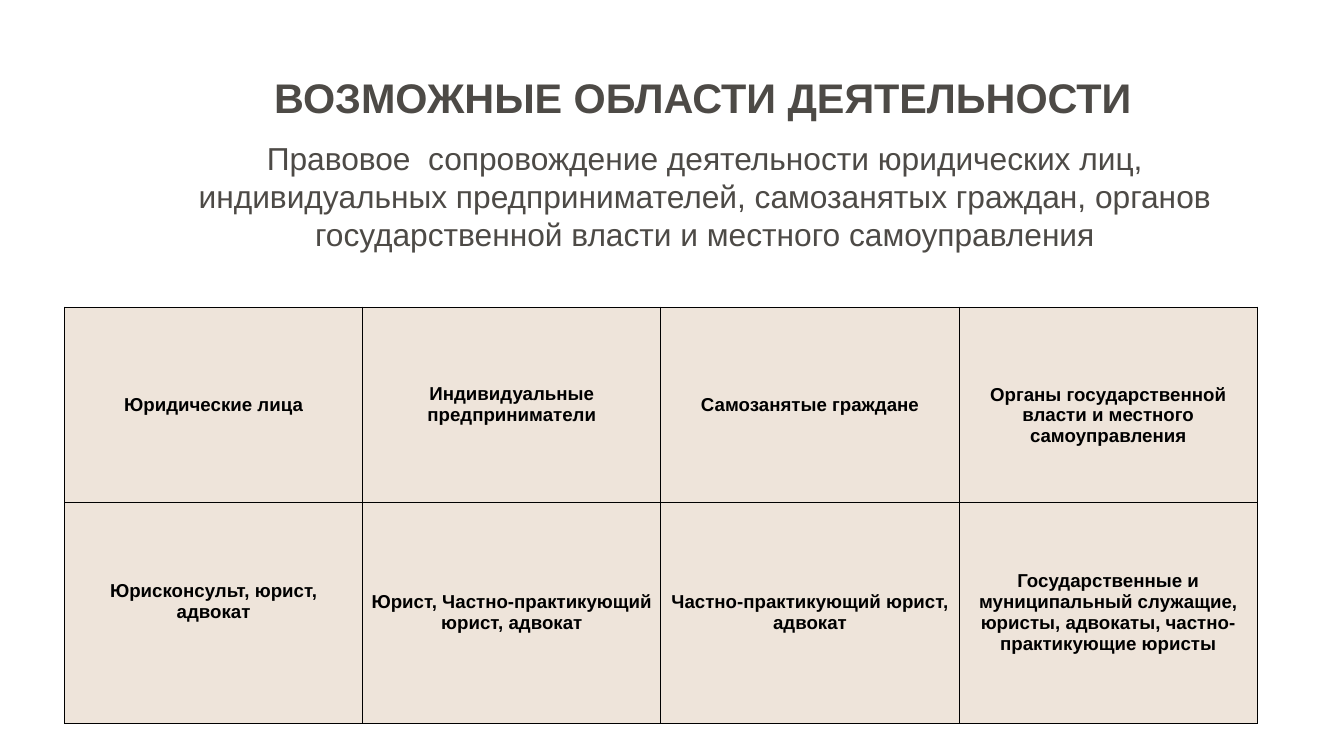
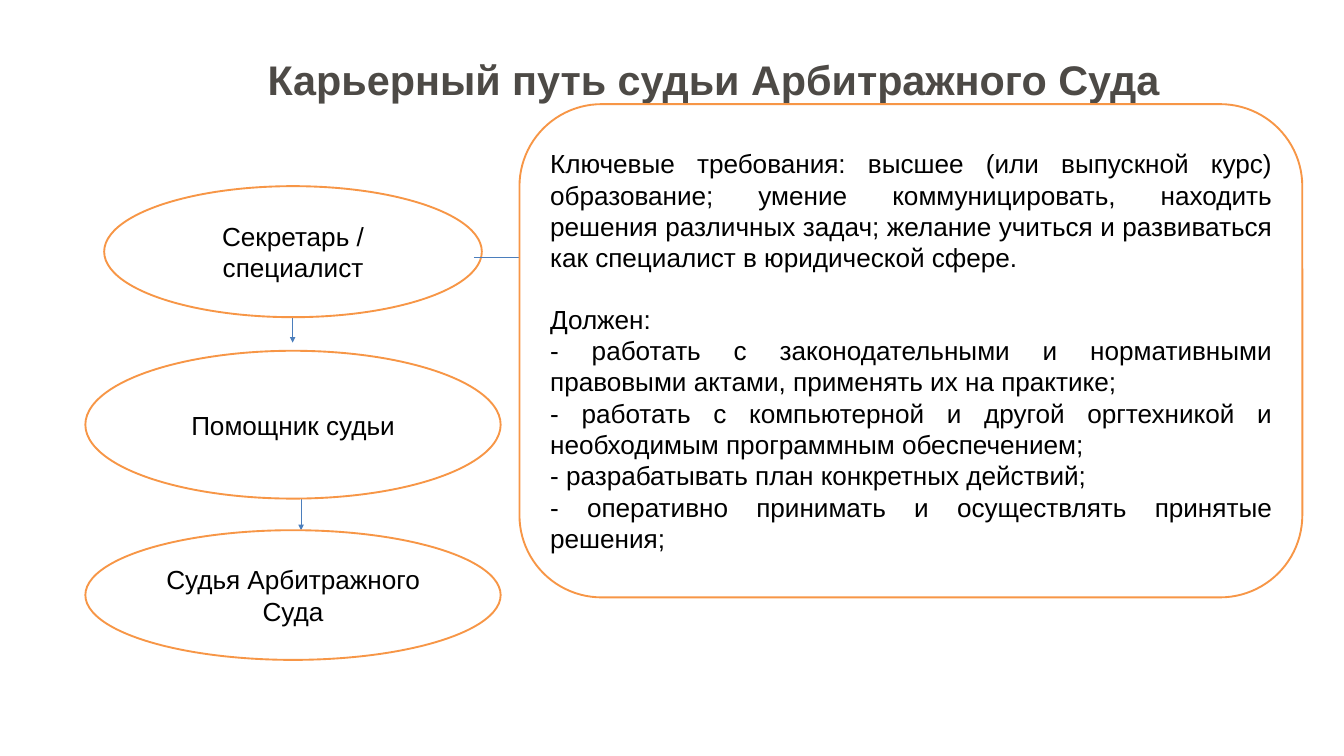
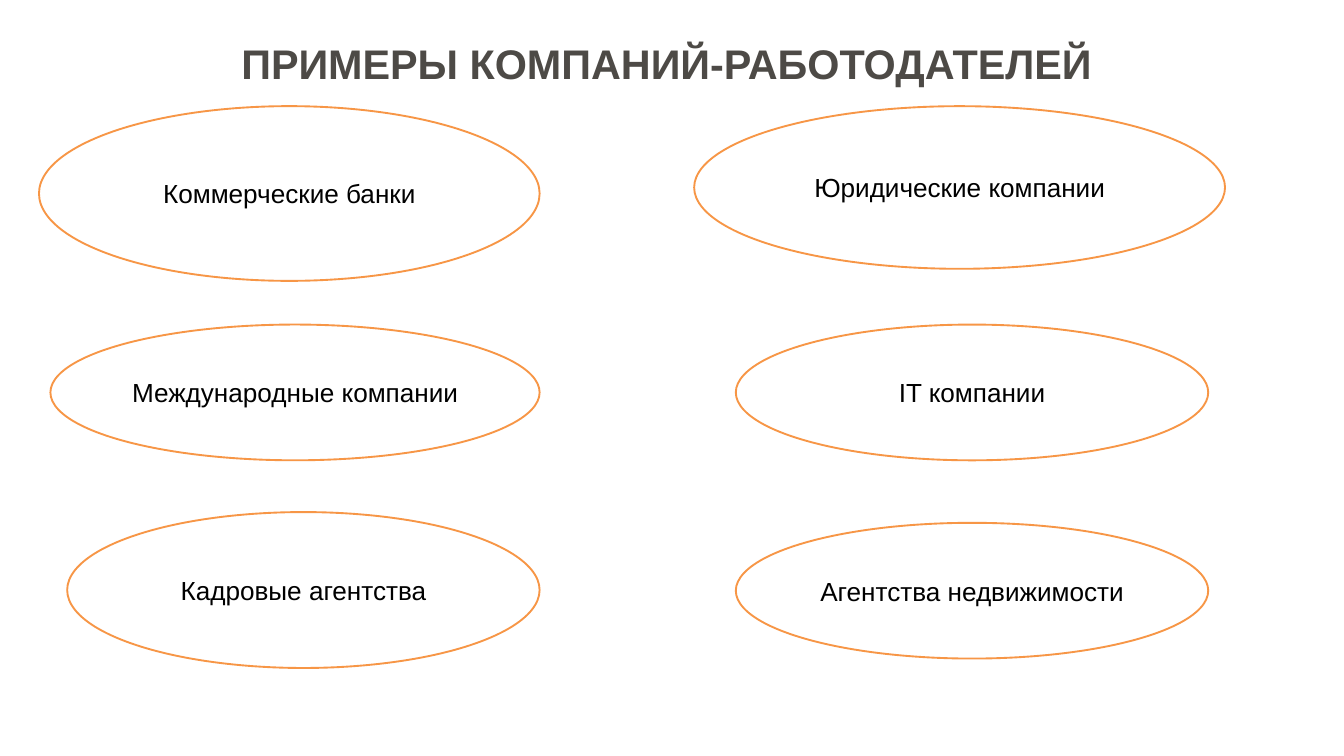
"""Build three slides about legal careers: fields of work, a judge's path, employers."""
from lxml import etree
from pptx import Presentation
from pptx.dml.color import RGBColor
from pptx.enum.shapes import MSO_CONNECTOR, MSO_SHAPE
from pptx.enum.text import MSO_ANCHOR, MSO_AUTO_SIZE, PP_ALIGN
from pptx.oxml import parse_xml
from pptx.oxml.ns import nsdecls, qn
from pptx.util import Inches, Pt

LEFT_TO_RIGHT = MSO_CONNECTOR.STRAIGHT
OVAL, CARD = MSO_SHAPE.OVAL, MSO_SHAPE.ROUNDED_RECTANGLE
MIDDLE, GROW = MSO_ANCHOR.MIDDLE, MSO_AUTO_SIZE.SHAPE_TO_FIT_TEXT
CENTER, RIGHT, JUSTIFY = PP_ALIGN.CENTER, PP_ALIGN.RIGHT, PP_ALIGN.JUSTIFY

COLORS = {"heading": "4D4A46", "body": "000000", "paper": "FFFFFF",
          "outline": "F79646", "arrow": "4B7EBC", "cell": "EEE4DA"}
PALETTE = {part: RGBColor.from_string(value) for part, value in COLORS.items()}
FONTS = {
    "title": {"name": "Arial", "size": Pt(44.3), "bold": True},
    "summary": {"name": "Arial", "size": Pt(34), "bold": False},
    "label": {"name": "Arial", "size": Pt(28), "bold": False},
    "cell": {"name": "Arial", "size": Pt(20), "bold": True},
}
BARE_FRAME = {"word_wrap": True, "auto_size": GROW, "margin_left": 0,
              "margin_right": 0, "margin_top": 0, "margin_bottom": 0}
LABEL_FRAME = {"word_wrap": True, "vertical_anchor": MIDDLE}

deck = Presentation()
deck.slide_width, deck.slide_height = Inches(20), Inches(11.25)
COLUMN, ROW = deck.slide_width / 80, deck.slide_height / 45
blank = deck.slide_layouts[6]


def area(left, top, width, height):
    """Turn grid columns and rows into slide lengths."""
    return [round(n * step) for n, step in zip((left, top, width, height), (COLUMN, ROW) * 2)]


def write(frame, lines, font, color, align, frame_format, spacing=None):
    """Fill a text frame with one paragraph per line."""
    for key, value in frame_format.items():
        setattr(frame, key, value)
    for number, line in enumerate(lines):
        paragraph = frame.add_paragraph() if number else frame.paragraphs[0]
        paragraph.alignment = align
        paragraph.line_spacing = spacing
        run = paragraph.add_run()
        run.text = line
        for key, value in FONTS[font].items():
            setattr(run.font, key, value)
        run.font.color.rgb = PALETTE[color]


titles = [
    ("ВОЗМОЖНЫЕ ОБЛАСТИ ДЕЯТЕЛЬНОСТИ", 0, 3.32, 67.36, RIGHT),
    ("Карьерный путь судьи Арбитражного Суда", 8.92, 2.24, 67.12, CENTER),
    ("ПРИМЕРЫ КОМПАНИЙ-РАБОТОДАТЕЛЕЙ", 3, 1.32, 73.36, CENTER),
]
for title, left, top, width, align in titles:
    slide = deck.slides.add_slide(blank)
    heading = slide.shapes.add_textbox(*area(left, top, width, 3.96))
    write(heading.text_frame, [title], "title", "heading", align, BARE_FRAME, 1.33)
fields, career, employers = deck.slides

clients = [
    ["Юридические лица", "Индивидуальные предприниматели", "Самозанятые граждане",
     "Органы государственной власти и местного самоуправления"],
    ["Юрисконсульт, юрист, адвокат", "Юрист, Частно-практикующий юрист, адвокат",
     "Частно-практикующий юрист, адвокат",
     "Государственные и муниципальный служащие, юристы, адвокаты, "
     "частно-практикующие юристы"],
]
clients_table = fields.shapes.add_table(2, 4, *area(3.84, 18.28, 71, 24.76)).table
clients_table.first_row = clients_table.horz_banding = False
for table_row, height in zip(clients_table.rows, (11.6, 13.16)):
    table_row.height = round(height * ROW)
for row, names in enumerate(clients):
    for column, name in enumerate(names):
        cell = clients_table.cell(row, column)
        write(cell.text_frame, [name], "cell", "body", CENTER, {"word_wrap": True})
        cell.vertical_anchor = MIDDLE
        for side in ("lnL", "lnR", "lnT", "lnB"):
            cell._tc.get_or_add_tcPr().append(parse_xml(
                f'<a:{side} {nsdecls("a")} w="12700"><a:solidFill>'
                f'<a:srgbClr val="{COLORS["body"]}"/></a:solidFill></a:{side}>'))
        cell.fill.solid()
        cell.fill.fore_color.rgb = PALETTE["cell"]
clients_table.cell(0, 3).margin_top = round(1.5 * ROW)
clients_table.cell(1, 0).margin_bottom = round(1.5 * ROW)

summary = fields.shapes.add_textbox(*area(9.08, 8.28, 65.76, 6.88))
write(summary.text_frame,
      ["Правовое  сопровождение деятельности юридических лиц, индивидуальных "
       "предпринимателей, самозанятых граждан, органов государственной власти "
       "и местного самоуправления"],
      "summary", "heading", CENTER, BARE_FRAME)

arrows = [((28.2, 15.32), (44.8, 15.32)),
          ((17.42, 18.88), (17.42, 20.4)),
          ((17.92, 29.68), (17.92, 31.56))]
for start, end in arrows:
    arrow = career.shapes.add_connector(LEFT_TO_RIGHT, *area(*start, *end))
    arrow.line.color.rgb = PALETTE["arrow"]
    arrow.line.width = Pt(0.75)
    etree.SubElement(arrow.line._get_or_add_ln(), qn("a:tailEnd"), type="triangle")
    etree.SubElement(arrow._element.spPr, qn("a:effectLst"))

requirements = [
    "Ключевые требования: высшее (или выпускной курс) образование; умение "
    "коммуницировать, находить решения различных задач; желание учиться и "
    "развиваться как специалист в юридической сфере.",
    "Должен:",
    "- работать с законодательными и нормативными правовыми актами, применять их на практике;",
    "- работать с компьютерной и другой оргтехникой и необходимым программным обеспечением;",
    "- разрабатывать план конкретных действий;",
    "- оперативно принимать и осуществлять принятые решения;",
]
outlined = [
    (career, OVAL, (6.2, 11.08, 22.48, 7.8), ["Секретарь / специалист"], CENTER),
    (career, OVAL, (5.08, 20.88, 24.72, 8.8), ["Помощник судьи"], CENTER),
    (career, OVAL, (5.08, 31.56, 24.72, 7.72), ["Судья Арбитражного Суда"], CENTER),
    (career, CARD, (30.92, 6.2, 46.6, 29.36), requirements, JUSTIFY),
    (employers, OVAL, (2.32, 6.32, 29.8, 10.4), ["Коммерческие банки"], CENTER),
    (employers, OVAL, (41.32, 6.32, 31.6, 9.68), ["Юридические компании"], CENTER),
    (employers, OVAL, (43.8, 19.32, 28.12, 8.08), ["IT компании"], CENTER),
    (employers, OVAL, (3, 19.32, 29.12, 8.08), ["Международные компании"], CENTER),
    (employers, OVAL, (4, 30.48, 28.12, 9.28), ["Кадровые агентства"], CENTER),
    (employers, OVAL, (43.8, 31.12, 28.12, 8.08), ["Агентства недвижимости"], CENTER),
]
for slide, outline, place, lines, align in outlined:
    item = slide.shapes.add_shape(outline, *area(*place))
    item.shadow.inherit = False
    item.fill.solid()
    item.fill.fore_color.rgb = PALETTE["paper"]
    item.line.color.rgb = PALETTE["outline"]
    item.line.width = Pt(2)
    write(item.text_frame, lines, "label", "body", align, LABEL_FRAME)
    if lines is requirements:
        item.text_frame.paragraphs[1].space_before = Pt(32)

# The first arrow starts over the top oval, so it is raised just below the card.
ovals_and_arrows = career.shapes._spTree
link = next(shape for shape in career.shapes if shape.shape_type == 9)
card = career.shapes[-1]
card._element.addprevious(link._element)

deck.save("out.pptx")
